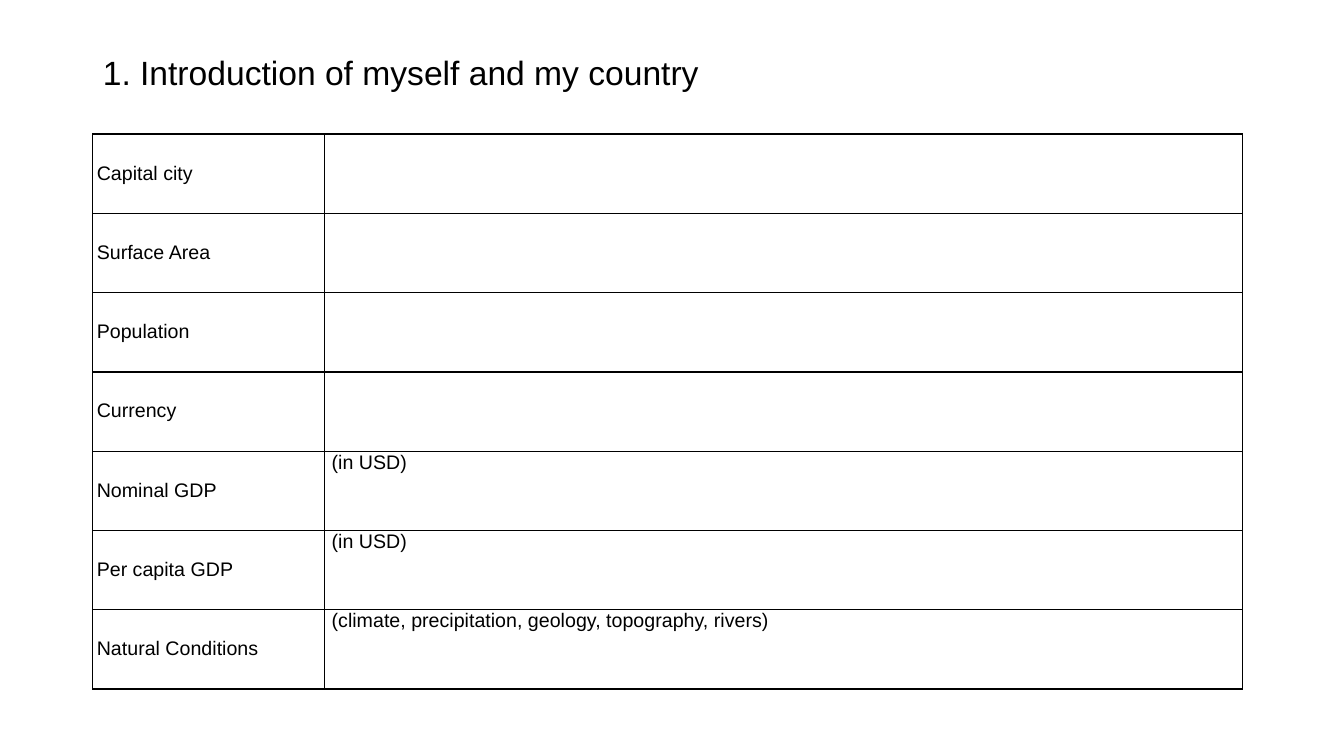
from lxml.etree import SubElement
from pptx import Presentation
from pptx.dml.color import RGBColor
from pptx.enum.text import MSO_ANCHOR, PP_ALIGN
from pptx.oxml.ns import qn
from pptx.util import Inches, Pt

TITLE = "1. Introduction of myself and my country"
FACTS = [
    ("Capital city", ""),
    ("Surface Area", ""),
    ("Population", ""),
    ("Currency", ""),
    ("Nominal GDP", "(in USD)"),
    ("Per capita GDP", "(in USD)"),
    ("Natural Conditions", "(climate, precipitation, geology, topography, rivers)"),
]
COLUMN_WIDTHS = (2.3, 9.1)
ROW_HEIGHT = 0.787
LEFT, TABLE_TOP = 0.92, 1.33
BLACK = RGBColor(0, 0, 0)
FONT = "Arial"


def write(frame, text, *, size=14, anchor=MSO_ANCHOR.TOP, align=PP_ALIGN.LEFT,
          spacing=None):
    frame.word_wrap = True
    frame.vertical_anchor = anchor
    para = frame.paragraphs[0]
    para.alignment = align
    para.line_spacing = spacing
    para.font.size = Pt(size)
    if text:
        span = para.add_run()
        span.text = text
        span.font.name = FONT
        span.font.size = Pt(size)
        span.font.bold = False
        span.font.color.rgb = BLACK


def format_cell(cell, text, inset, **text_format):
    cell.margin_left = cell.margin_right = Inches(inset)
    cell.margin_top = cell.margin_bottom = 0
    write(cell.text_frame, text, **text_format)
    cell.vertical_anchor = text_format.get("anchor", MSO_ANCHOR.TOP)
    properties = cell._tc.get_or_add_tcPr()
    for side in ("a:lnL", "a:lnR", "a:lnT", "a:lnB"):
        line = SubElement(properties, qn(side), w=str(Pt(1)))
        fill = SubElement(line, qn("a:solidFill"))
        SubElement(fill, qn("a:srgbClr"), val=str(BLACK))
    cell.fill.background()


def add_facts_table(page):
    frame = page.shapes.add_table(
        len(FACTS), len(COLUMN_WIDTHS), Inches(LEFT), Inches(TABLE_TOP),
        Inches(sum(COLUMN_WIDTHS)), Inches(ROW_HEIGHT * len(FACTS)))
    table = frame.table
    table.first_row = table.horz_banding = False
    for column, width in zip(table.columns, COLUMN_WIDTHS):
        column.width = Inches(width)
    for index, (label, hint) in enumerate(FACTS):
        table.rows[index].height = Inches(ROW_HEIGHT)
        format_cell(table.cell(index, 0), label, 0.04,
                    anchor=MSO_ANCHOR.MIDDLE, spacing=Pt(15))
        format_cell(table.cell(index, 1), hint, 0.07, align=PP_ALIGN.JUSTIFY)


def main():
    deck = Presentation()
    deck.slide_width, deck.slide_height = Inches(13.33), Inches(7.5)
    page = deck.slides.add_slide(deck.slide_layouts[5])
    title = page.shapes.title
    title.left, title.top = Inches(LEFT), Inches(0.4)
    title.width, title.height = Inches(11.5), Inches(0.69)
    write(title.text_frame, TITLE, size=24, anchor=MSO_ANCHOR.MIDDLE, spacing=0.9)
    add_facts_table(page)
    deck.save("out.pptx")


if __name__ == "__main__":
    main()
